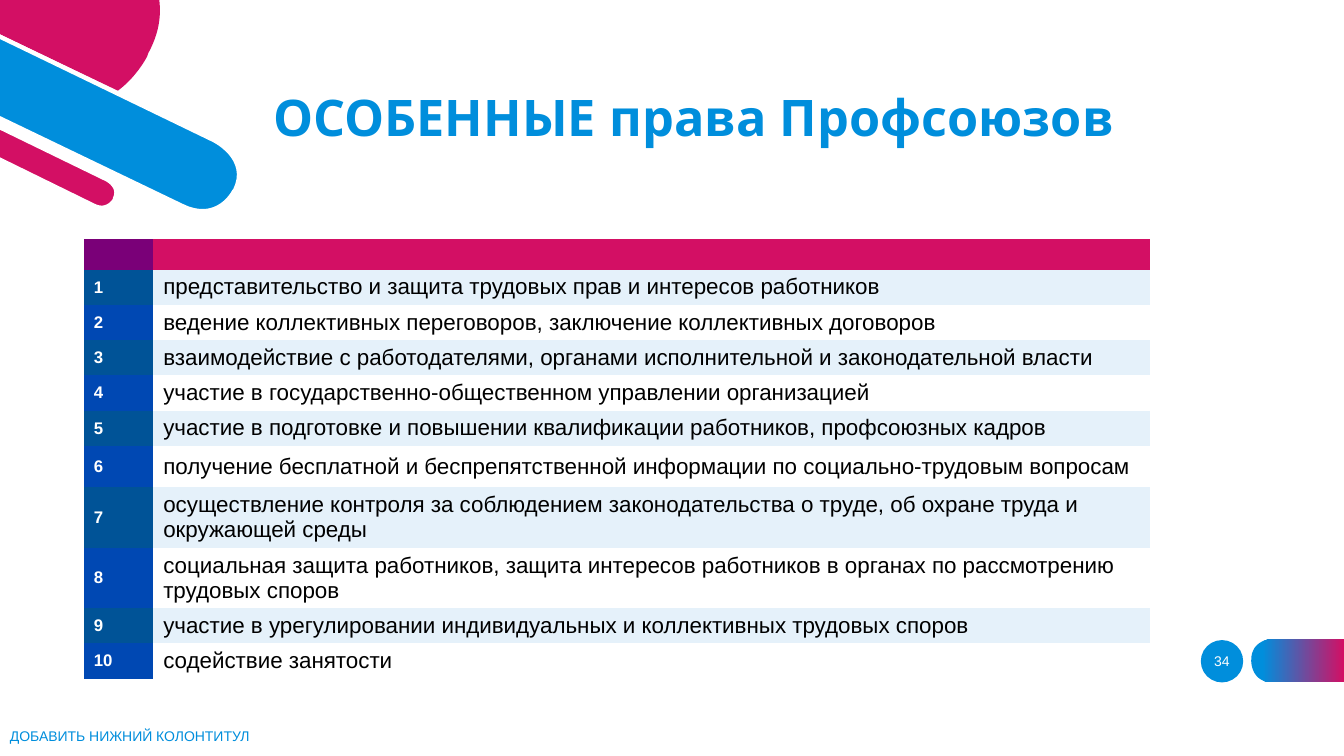
"""Build the slide on the special rights of trade unions."""
from pptx import Presentation
from pptx.dml.color import RGBColor
from pptx.enum.shapes import MSO_SHAPE
from pptx.enum.text import MSO_ANCHOR, MSO_AUTO_SIZE, PP_ALIGN
from pptx.oxml.ns import qn
from pptx.util import Inches, Pt
from lxml.etree import SubElement

BLUE, PINK, WHITE, BLACK = "008EDC", "D30F64", "FFFFFF", "000000"
HEAD = ("7A0078", PINK)
BANDS = (("005397", "E5F1FA"), ("0048B3", WHITE))
TITLE = "ОСОБЕННЫЕ права Профсоюзов"
FOOTER = "ДОБАВИТЬ НИЖНИЙ КОЛОНТИТУЛ"
NUMBER = "34"
RIGHTS = [
    "представительство и защита трудовых прав и интересов работников",
    "ведение коллективных переговоров, заключение коллективных договоров",
    "взаимодействие с работодателями, органами исполнительной и законодательной власти",
    "участие в государственно-общественном управлении организацией",
    "участие в подготовке и повышении квалификации работников, профсоюзных кадров",
    "получение бесплатной и беспрепятственной информации по социально-трудовым вопросам",
    "осуществление контроля за соблюдением законодательства о труде, об охране труда и окружающей среды",
    "социальная защита работников, защита интересов работников в органах по рассмотрению трудовых споров",
    "участие в урегулировании индивидуальных и коллективных трудовых споров",
    "содействие занятости",
]
COLS = (0.69, 9.89)
TOP_ROW, ROW = 0.29, 0.35
TALL = {6: 0.41, 7: 0.6, 8: 0.6}

DISC = [(0, 0), (1.58, 0), (1.6, 0.15, 1.58, 0.33, 1.47, 0.53), (1.46, 0.56),
        (1.46, 0.56, 1.36, 0.76, 1.17, 0.9), (0, 0.34)]
PILL = [(-0.05, 0.34), (2.12, 1.39), (2.12, 1.39, 2.49, 1.57, 2.33, 1.89), (2.32, 1.9),
        (2.32, 1.9, 2.16, 2.22, 1.8, 2.04), (-0.05, 1.15)]
STRIPE = [(-0.05, 1.24), (1.06, 1.78), (1.06, 1.78, 1.2, 1.85, 1.14, 1.97), (1.14, 1.98),
          (1.14, 1.98, 1.07, 2.11, 0.93, 2.04), (-0.05, 1.56)]
TAB = [(13.33, 6.34), (12.62, 6.34), (12.62, 6.34, 12.41, 6.34, 12.41, 6.55), (12.41, 6.56),
       (12.41, 6.56, 12.41, 6.77, 12.62, 6.77), (13.33, 6.77)]


def tint(code):
    return RGBColor.from_string(code)


def paint(fill, code):
    fill.solid()
    fill.fore_color.rgb = tint(code)


def write(frame, text, size, code, bold=False, font="Arial", align=PP_ALIGN.LEFT):
    para = frame.paragraphs[0]
    para.alignment = align
    run = para.add_run()
    run.text = text
    run.font.size, run.font.bold, run.font.name = Pt(size), bold, font
    run.font.color.rgb = tint(code)
    return para


def trace(steps, count=16):
    """Turn lines and cubic curves into a list of points."""
    points = []
    for step in steps:
        if len(step) == 2:
            points.append(step)
            continue
        ctrl = [points[-1], step[:2], step[2:4], step[4:]]
        for i in range(1, count + 1):
            t = i / count
            parts = ((1 - t) ** 3, 3 * t * (1 - t) ** 2, 3 * t * t * (1 - t), t ** 3)
            points.append(tuple(sum(w * c[k] for w, c in zip(parts, ctrl)) for k in (0, 1)))
    return [(Inches(x), Inches(y)) for x, y in points]


def draw(shapes, steps, code, edge=None):
    points = trace(steps)
    pen = shapes.build_freeform(*points[0])
    pen.add_line_segments(points[1:], close=True)
    shape = pen.convert_to_shape()
    shape.shadow.inherit = False
    paint(shape.fill, code)
    if edge:
        paint(shape.line.fill, edge)
        shape.line.width = Pt(3)
    else:
        shape.line.fill.background()
    return shape


def label(shapes, box, text, code, align):
    frame = shapes.add_textbox(*map(Inches, box)).text_frame
    frame.word_wrap = True
    frame.vertical_anchor = MSO_ANCHOR.MIDDLE
    write(frame, text, 10, code, align=align)


def fill_table(shapes):
    rows = [TOP_ROW] + [TALL.get(i, ROW) for i in range(1, len(RIGHTS) + 1)]
    box = map(Inches, (0.83, 2.37, sum(COLS), sum(rows)))
    table = shapes.add_table(len(rows), len(COLS), *box).table
    style = table._tbl.tblPr.find(qn("a:tableStyleId"))
    style.text = "{2D5ABB26-0587-4C30-8999-92F81FD0307C}"
    for col, width in zip(table.columns, COLS):
        col.width = Inches(width)
    for row, height in zip(table.rows, rows):
        row.height = Inches(height)
    for cell, code in zip(table.rows[0].cells, HEAD):
        paint(cell.fill, code)
        SubElement(cell.text_frame.paragraphs[0]._p, qn("a:endParaRPr"), sz="1200")
    for i, right in enumerate(RIGHTS):
        num, text = table.rows[i + 1].cells
        for cell, code in zip((num, text), BANDS[i % 2]):
            paint(cell.fill, code)
            cell.vertical_anchor = MSO_ANCHOR.MIDDLE
        write(num.text_frame, str(i + 1), 12, WHITE, bold=True)
        write(text.text_frame, right, 16, BLACK)


def main():
    deck = Presentation()
    deck.slide_width, deck.slide_height = Inches(13.33), Inches(7.5)
    slide = deck.slides.add_slide(deck.slide_layouts[5])
    shapes = slide.shapes

    dot = shapes.add_shape(MSO_SHAPE.OVAL, *map(Inches, (11.91, 6.35, 0.42, 0.42)))
    dot.shadow.inherit = False
    paint(dot.fill, BLUE)
    dot.line.fill.background()

    blend = draw(shapes, TAB, BLUE).fill
    blend.gradient()
    blend.gradient_angle = 0
    for stop, code, place in zip(blend.gradient_stops, (BLUE, PINK), (0.12, 1)):
        stop.color.rgb = tint(code)
        stop.position = place

    draw(shapes, DISC, PINK)
    draw(shapes, PILL, BLUE, WHITE)
    draw(shapes, STRIPE, PINK, WHITE)

    title = shapes.title
    title.left, title.top, title.width, title.height = map(Inches, (2.61, 0.74, 8.96, 0.77))
    frame = title.text_frame
    frame.auto_size = MSO_AUTO_SIZE.NONE
    frame.vertical_anchor = MSO_ANCHOR.BOTTOM
    write(frame, TITLE, 36, BLUE, True, "League Spartan").line_spacing = 0.9

    fill_table(shapes)
    label(shapes, (0, 7.1, 4.5, 0.4), FOOTER, BLUE, PP_ALIGN.LEFT)
    label(shapes, (11.82, 6.36, 0.6, 0.4), NUMBER, WHITE, PP_ALIGN.CENTER)
    deck.save("out.pptx")


if __name__ == "__main__":
    main()
